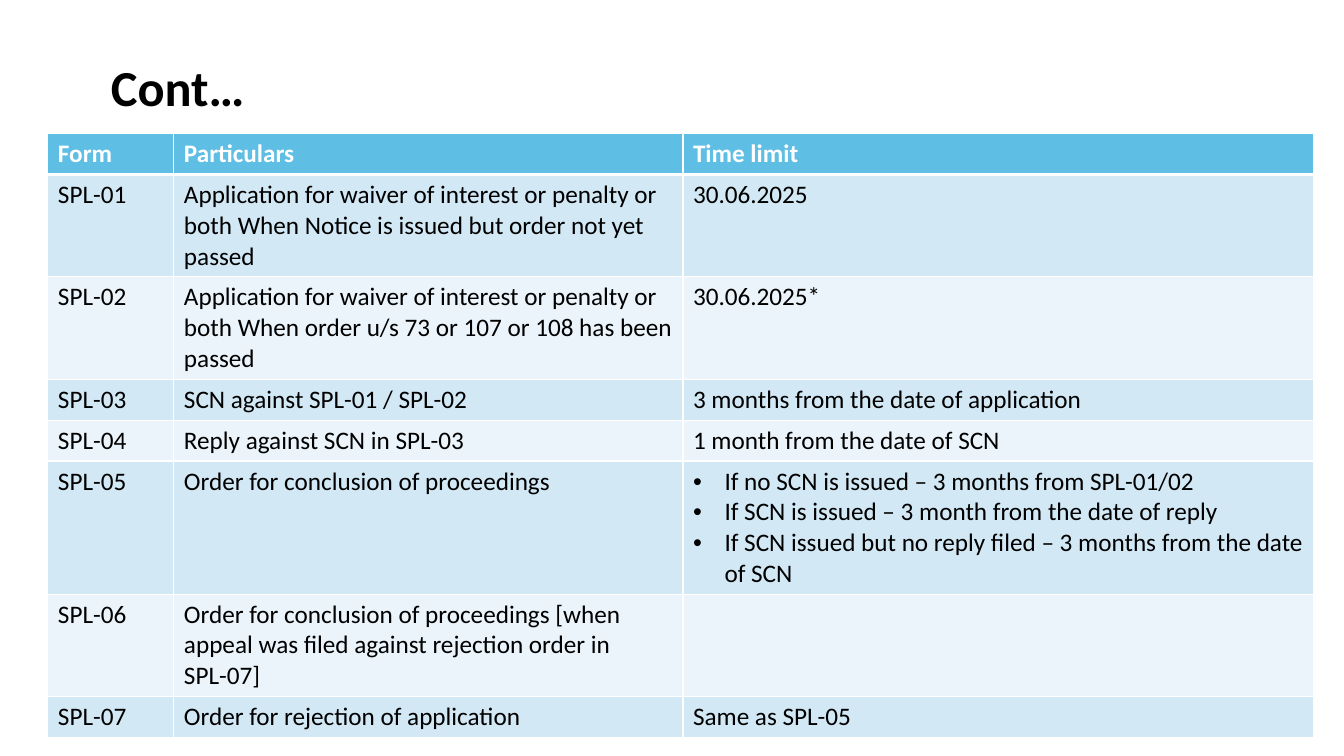
from pptx import Presentation
from pptx.dml.color import RGBColor
from pptx.enum.text import MSO_ANCHOR, MSO_AUTO_SIZE, PP_ALIGN
from pptx.oxml import parse_xml
from pptx.oxml.ns import nsdecls
from pptx.util import Pt

COLORS = {
    "text": "000000",
    "header_text": "FFFFFF",
    "border": "FFFFFF",
    "header": "5EBEE4",
    "odd_row": "D2E8F5",
    "even_row": "EAF4FA",
}
FONT = "Calibri"
LINE_HEIGHT = 21.5
CELL_PADDING = 7.6
BULLET_INDENT = Pt(22.5)

# Each row: form, particulars, time limit, number of text lines
ROWS = [
    ("Form", "Particulars", "Time limit", 1),
    ("SPL-01", "Application for waiver of interest or penalty or both "
     "When Notice is issued but order not yet passed", "30.06.2025", 3),
    ("SPL-02", "Application for waiver of interest or penalty or both "
     "When order u/s 73 or 107 or 108 has been passed", "30.06.2025*", 3),
    ("SPL-03", "SCN against SPL-01 / SPL-02", "3 months from the date of application", 1),
    ("SPL-04", "Reply against SCN in SPL-03", "1 month from the date of SCN", 1),
    ("SPL-05", "Order for conclusion of proceedings",
     "If no SCN is issued – 3 months from SPL-01/02\n"
     "If SCN is issued – 3 month from the date of reply\n"
     "If SCN issued but no reply filed – 3 months from the date of SCN", 4),
    ("SPL-06", "Order for conclusion of proceedings "
     "[when appeal was filed against rejection order in SPL-07]", "", 3),
    ("SPL-07", "Order for rejection of application", "Same as SPL-05", 1),
]
COLUMN_WIDTHS = [90, 363.6, 450.7]


def format_paragraph(paragraph, size, color, bold):
    for run in paragraph.runs:
        run.font.name = FONT
        run.font.size = Pt(size)
        run.font.bold = bold
        run.font.color.rgb = RGBColor.from_string(COLORS[color])


def add_borders(cell, top, bottom):
    properties = cell._tc.get_or_add_tcPr()
    for side, width in (("L", 1), ("R", 1), ("T", top), ("B", bottom)):
        properties.append(parse_xml(
            f'<a:ln{side} {nsdecls("a")} w="{Pt(width)}"><a:solidFill>'
            f'<a:srgbClr val="{COLORS["border"]}"/></a:solidFill></a:ln{side}>'))


presentation = Presentation()
presentation.slide_width = Pt(960)
presentation.slide_height = Pt(540)
slide = presentation.slides.add_slide(presentation.slide_layouts[5])

# Title
title = slide.shapes.title
title.left, title.top, title.width, title.height = Pt(72), Pt(36), Pt(866), Pt(51)
title.text_frame.text = "Cont…"
title.text_frame.auto_size = MSO_AUTO_SIZE.NONE
title.text_frame.vertical_anchor = MSO_ANCHOR.MIDDLE
title.text_frame.paragraphs[0].alignment = PP_ALIGN.LEFT
format_paragraph(title.text_frame.paragraphs[0], 36, "text", True)

# Table grid
row_heights = [CELL_PADDING + LINE_HEIGHT * row[-1] for row in ROWS]
table = slide.shapes.add_table(
    len(ROWS), len(COLUMN_WIDTHS), Pt(34.2), Pt(95.4),
    Pt(sum(COLUMN_WIDTHS)), Pt(sum(row_heights))).table
for column, width in zip(table.columns, COLUMN_WIDTHS):
    column.width = Pt(width)

# Table cells
for row_index, (*texts, _) in enumerate(ROWS):
    table.rows[row_index].height = Pt(row_heights[row_index])
    is_header = row_index == 0
    fill = "header" if is_header else "odd_row" if row_index % 2 else "even_row"
    for column_index, text in enumerate(texts):
        cell = table.cell(row_index, column_index)
        add_borders(cell, 3 if row_index == 1 else 1, 3 if is_header else 1)
        cell.fill.solid()
        cell.fill.fore_color.rgb = RGBColor.from_string(COLORS[fill])
        cell.text_frame.text = text
        for paragraph in cell.text_frame.paragraphs:
            format_paragraph(paragraph, 18, "header_text" if is_header else "text", is_header)
            # Multi-item cells become bulleted lists
            if "\n" in text:
                properties = paragraph._p.get_or_add_pPr()
                properties.set("marL", str(BULLET_INDENT))
                properties.set("indent", str(-BULLET_INDENT))
                properties.append(parse_xml(f'<a:buFont {nsdecls("a")} typeface="Arial"/>'))
                properties.append(parse_xml(f'<a:buChar {nsdecls("a")} char="•"/>'))

presentation.save("out.pptx")
